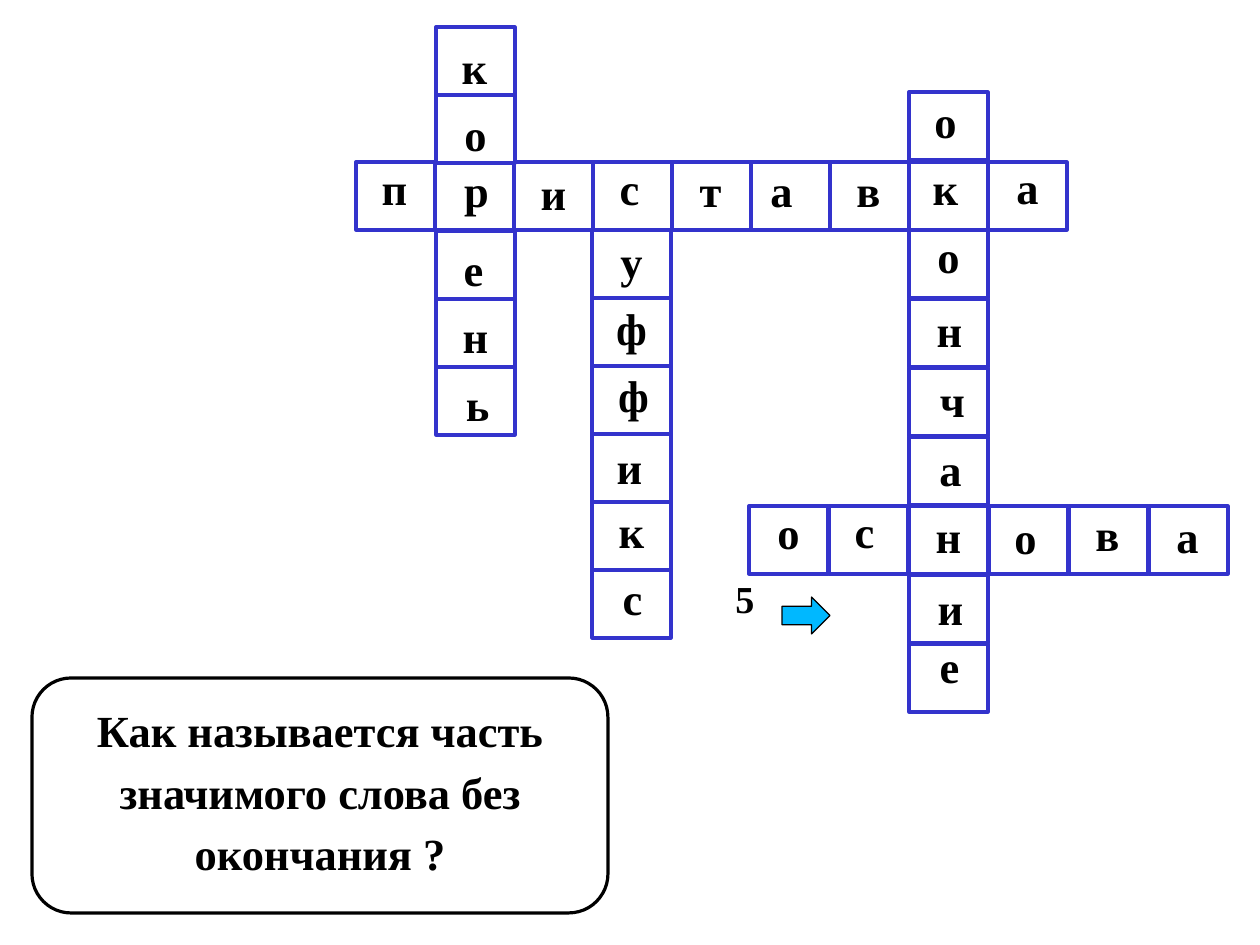
from dataclasses import dataclass

from pptx import Presentation
from pptx.dml.color import RGBColor
from pptx.enum.shapes import MSO_SHAPE
from pptx.enum.text import MSO_ANCHOR, PP_ALIGN
from pptx.util import Pt

EMU_PER_PX = 8000


@dataclass(frozen=True)
class Theme:
    font: str = "Times New Roman"
    ink: RGBColor = RGBColor(0, 0, 0)
    paper: RGBColor = RGBColor(255, 255, 255)
    grid: RGBColor = RGBColor(0x33, 0x33, 0xCC)
    arrow: RGBColor = RGBColor(0x00, 0xB8, 0xFF)
    letter_size: int = 28
    number_size: int = 24
    outline: float = 2
    thin_outline: float = 0.75


@dataclass(frozen=True)
class Word:
    """A word of the crossword; a shift of None leaves out a shared cell."""
    letters: str
    start: tuple
    step: tuple
    shifts: tuple


THEME = Theme()
CELL_SIZE = (79, 68)
WORDS = (
    Word("приставка", (356, 162), (79, 0),
         ((-1, -1), (2, 1), (0, 4), (-3, -1), (-1, 1), (-9, 1), (-1, 1), (-3, -1), (0, -2))),
    Word("корень", (436, 27), (0, 68),
         ((-1, 13), (0, 12), None, (-2, 11), (0, 10), (2, 10))),
    Word("суффикс", (592, 162), (0, 68),
         (None, (0, 4), (0, 3), (2, 2), (-2, 6), (0, 2), (1, 1))),
    Word("окончание", (909, 92), (0, 69),
         ((-3, 2), None, (0, -1), (1, 4), (4, 5), (2, 5), (0, 3), (2, 6), (1, -5))),
    Word("основа", (749, 506), (80, 0),
         ((0, -1), (-4, -2), None, (-3, 4), (-1, 1), (-1, 3))),
)


def px(value):
    return value * EMU_PER_PX


def add_outlined_shape(slide, kind, box, fill, line, width):
    shape = slide.shapes.add_shape(kind, *map(px, box))
    shape.shadow.inherit = False
    shape.fill.solid()
    shape.fill.fore_color.rgb = fill
    shape.line.color.rgb = line
    shape.line.width = Pt(width)
    return shape


def write_text(shape, text, size, frame_format, paragraph_format):
    frame = shape.text_frame
    for name, value in frame_format.items():
        setattr(frame, name, value)
    paragraph = frame.paragraphs[0]
    for name, value in paragraph_format.items():
        setattr(paragraph, name, value)
    run = paragraph.add_run()
    run.text = text
    for name, value in {"name": THEME.font, "size": Pt(size), "bold": True}.items():
        setattr(run.font, name, value)
    run.font.color.rgb = THEME.ink


def add_cell(slide, box, letter, shift):
    """Draw one square; shift moves its letter right and down through the insets."""
    right, down = shift
    cell = add_outlined_shape(slide, MSO_SHAPE.RECTANGLE, box,
                              THEME.paper, THEME.grid, THEME.outline)
    frame_format = {
        "word_wrap": True,
        "vertical_anchor": MSO_ANCHOR.TOP,
        "margin_left": px(11 + right),
        "margin_right": px(11 - right),
        "margin_top": px(5 + down),
        "margin_bottom": 0,
    }
    write_text(cell, letter, THEME.letter_size, frame_format,
               {"alignment": PP_ALIGN.CENTER, "line_spacing": 0.93})


def add_word(slide, word):
    left, top = word.start
    across, down = word.step
    for index, (letter, shift) in enumerate(zip(word.letters, word.shifts)):
        if shift is not None:
            position = (left + index * across, top + index * down)
            add_cell(slide, position + CELL_SIZE, letter, shift)


def add_question(slide, box, question):
    panel = add_outlined_shape(slide, MSO_SHAPE.ROUNDED_RECTANGLE, box,
                               THEME.paper, THEME.ink, THEME.outline)
    frame_format = {
        "word_wrap": True,
        "vertical_anchor": MSO_ANCHOR.MIDDLE,
        "margin_bottom": px(22),
    }
    write_text(panel, question, THEME.letter_size, frame_format,
               {"alignment": PP_ALIGN.CENTER, "line_spacing": 1.15, "space_after": Pt(10)})


def add_word_pointer(slide, box, number):
    """Place the word's number at the left of the box and an arrow at its right."""
    left, top, width, height = box
    arrow_width, arrow_height = 48, 37
    add_outlined_shape(slide, MSO_SHAPE.RIGHT_ARROW,
                       (left + width - arrow_width, top + 23, arrow_width, arrow_height),
                       THEME.arrow, THEME.ink, THEME.thin_outline)
    label = slide.shapes.add_textbox(*map(px, (left, top, 42, height)))
    write_text(label, number, THEME.number_size, {"word_wrap": False},
               {"alignment": PP_ALIGN.LEFT, "line_spacing": 0.93})


def main():
    presentation = Presentation()
    presentation.slide_width, presentation.slide_height = px(1260), px(945)
    slide = presentation.slides.add_slide(presentation.slide_layouts[6])
    for word in WORDS:
        add_word(slide, word)
    add_question(slide, (32, 678, 576, 235),
                 "Как называется часть значимого слова без окончания ?")
    add_word_pointer(slide, (724, 574, 106, 55), "5")
    presentation.save("out.pptx")


if __name__ == "__main__":
    main()
